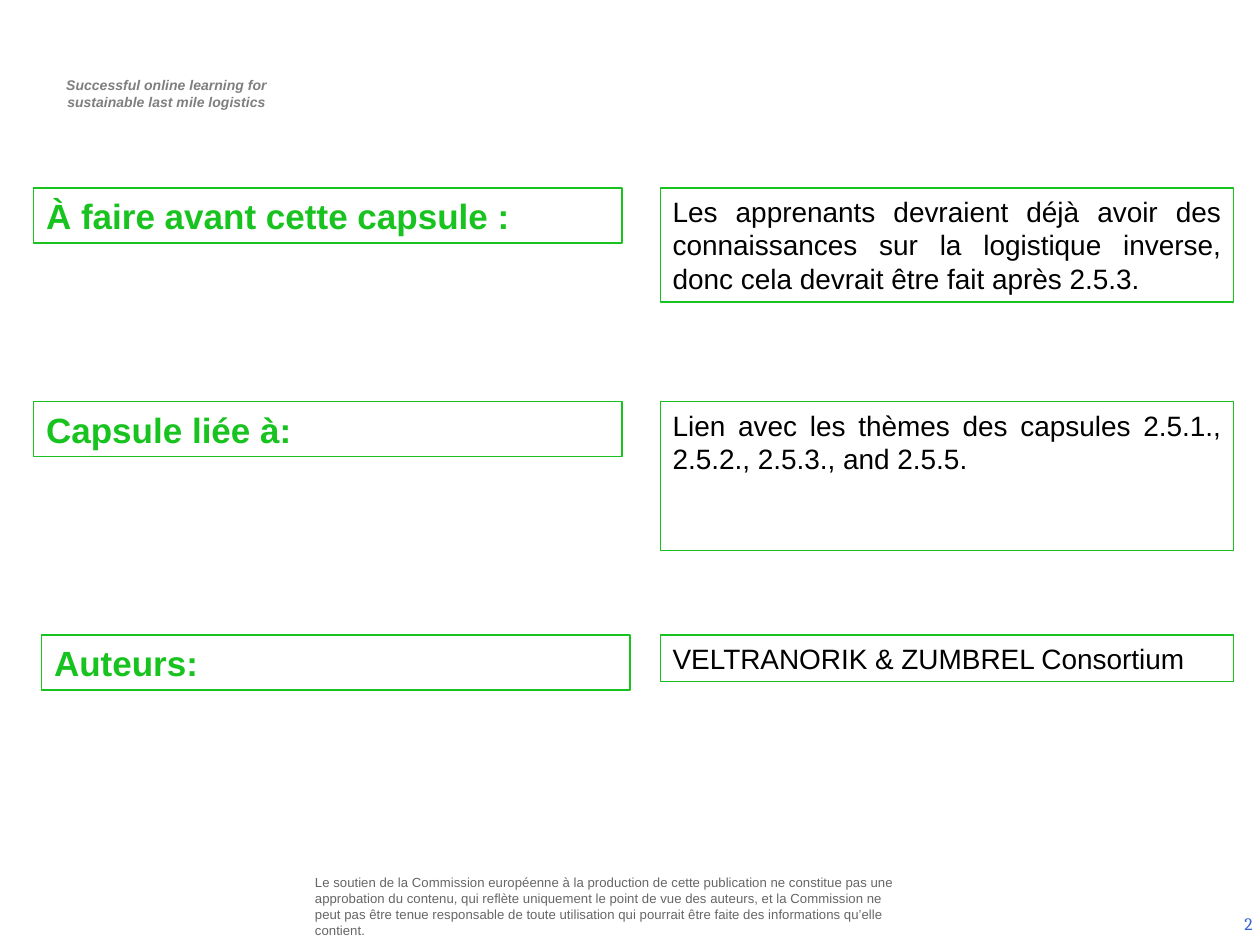
import pptx
import pptx.dml.color
import pptx.enum.shapes
import pptx.enum.text
import pptx.util

Cm = pptx.util.Cm
Pt = pptx.util.Pt
RGBColor = pptx.dml.color.RGBColor
ALIGN = pptx.enum.text.PP_ALIGN
ANCHOR = pptx.enum.text.MSO_ANCHOR

GREEN = RGBColor(0x18, 0xC3, 0x20)
BLACK = RGBColor(0, 0, 0)
WHITE = RGBColor(0xFF, 0xFF, 0xFF)
HEADER_GREY = RGBColor(0x7F, 0x7F, 0x7F)
NOTICE_GREY = RGBColor(0x66, 0x66, 0x66)
NUMBER_BLUE = RGBColor(0x33, 0x66, 0xCC)

# Content: label, label left, detail, detail alignment, row top, detail height (cm)
ROWS = [
    ("À faire avant cette capsule :", 0.68,
     "Les apprenants devraient déjà avoir des connaissances sur la logistique "
     "inverse, donc cela devrait être fait après 2.5.3.",
     ALIGN.JUSTIFY, 3.79, 2.3),
    ("Capsule liée à:", 0.68,
     "Lien avec les thèmes des capsules 2.5.1., 2.5.2., 2.5.3., and 2.5.5.",
     ALIGN.JUSTIFY, 8.1, 3),
    ("Auteurs:", 0.84, "VELTRANORIK & ZUMBREL Consortium",
     ALIGN.LEFT, 12.8, 0.94),
]
LABEL_WIDTH, LABEL_HEIGHT = 11.86, 1.11
DETAIL_LEFT, DETAIL_WIDTH = 13.31, 11.56

HEADER = ["Successful online learning for", "sustainable last mile logistics"]
NOTICE = [
    "Le soutien de la Commission européenne à la production de cette publication "
    "ne constitue pas une approbation du contenu, qui reflète uniquement le point "
    "de vue des auteurs, et la Commission ne peut pas être tenue responsable de "
    "toute utilisation qui pourrait être faite des informations qu’elle contient."
]

# Text formats
LABEL_FONT = {"name": "Arial", "size": Pt(20), "bold": True}
DETAIL_FONT = {"name": "Arial", "size": Pt(16), "bold": False}
HEADER_FONT = {"name": "Arial", "size": Pt(8), "bold": True, "italic": True}
NOTICE_FONT = {"name": "Arial", "size": Pt(7.5)}
NUMBER_FONT = {"name": "Cambria", "size": Pt(10)}


def write(holder, lines, font, color, align=ALIGN.LEFT, anchor=ANCHOR.TOP,
          inset=(0.25, 0.13)):
    frame = holder.text_frame
    side, end = inset
    settings = {
        "word_wrap": True, "vertical_anchor": anchor,
        "margin_left": Cm(side), "margin_right": Cm(side),
        "margin_top": Cm(end), "margin_bottom": Cm(end),
    }
    for key, value in settings.items():
        setattr(frame, key, value)
    frame.text = "\n".join(lines)
    for paragraph in frame.paragraphs:
        paragraph.alignment = align
        for key, value in font.items():
            setattr(paragraph.font, key, value)
        paragraph.font.color.rgb = color


def add_panel(slide, place, text, font, color, align=ALIGN.LEFT):
    panel = slide.shapes.add_shape(
        pptx.enum.shapes.MSO_SHAPE.RECTANGLE, *map(Cm, place))
    panel.shadow.inherit = False
    panel.fill.solid()
    panel.fill.fore_color.rgb = WHITE
    panel.line.color.rgb = GREEN
    panel.line.width = Pt(0.75)
    write(panel, [text], font, color, align)


def add_text(slide, place, *args, **options):
    write(slide.shapes.add_textbox(*map(Cm, place)), *args, **options)


def main():
    deck = pptx.Presentation()
    deck.slide_width, deck.slide_height = Cm(25.4), Cm(19.05)
    slide = deck.slides.add_slide(deck.slide_layouts[6])

    # Header, notice and slide number
    add_text(slide, (0.78, 1.42, 5.16, 0.94), HEADER, HEADER_FONT, HEADER_GREY,
             align=ALIGN.CENTER)
    add_text(slide, (6.25, 17.65, 12.01, 1.24), NOTICE, NOTICE_FONT, NOTICE_GREY,
             anchor=ANCHOR.MIDDLE, inset=(0.1, 0.1))
    add_text(slide, (19.58, 18.11, 5.92, 1.02), ["2"], NUMBER_FONT, NUMBER_BLUE,
             align=ALIGN.RIGHT, anchor=ANCHOR.MIDDLE)

    # Label and detail panels
    for label, label_left, detail, align, top, height in ROWS:
        add_panel(slide, (label_left, top, LABEL_WIDTH, LABEL_HEIGHT),
                  label, LABEL_FONT, GREEN)
        add_panel(slide, (DETAIL_LEFT, top, DETAIL_WIDTH, height),
                  detail, DETAIL_FONT, BLACK, align)

    deck.save("out.pptx")


if __name__ == "__main__":
    main()
